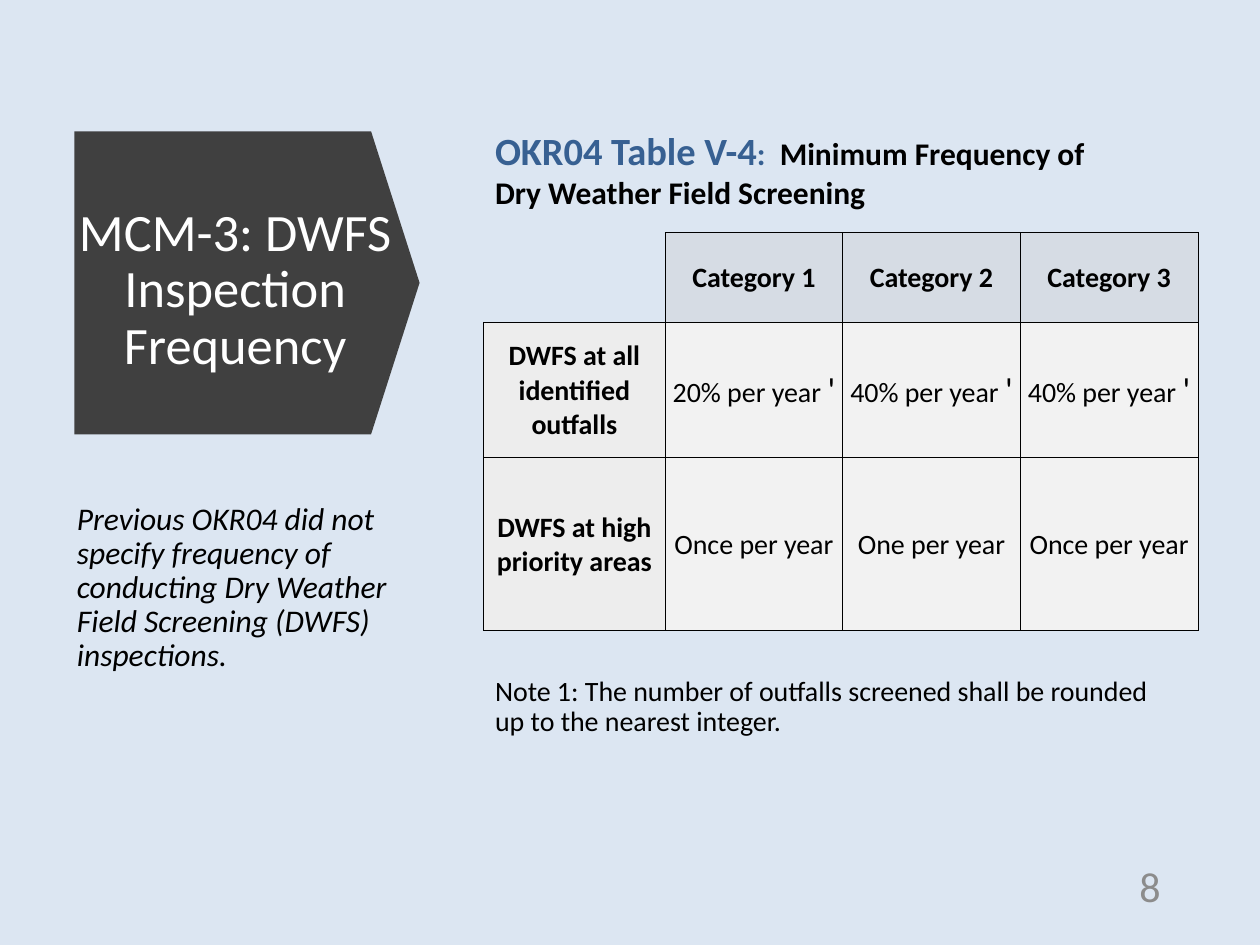
from lxml import etree
from pptx import Presentation
from pptx.dml.color import RGBColor
from pptx.enum.shapes import MSO_SHAPE
from pptx.enum.text import MSO_ANCHOR, PP_ALIGN
from pptx.oxml.ns import qn
from pptx.util import Pt

BACKGROUND = RGBColor(0xDC, 0xE6, 0xF2)
CHARCOAL = RGBColor(0x40, 0x40, 0x40)
WHITE = RGBColor(0xFF, 0xFF, 0xFF)
BLACK = RGBColor(0, 0, 0)
BLUE = RGBColor(0x37, 0x60, 0x92)
GREY = RGBColor(0x8C, 0x8C, 0x8C)
HEADER_FILL = RGBColor(0xD6, 0xDC, 0xE4)
LABEL_FILL = RGBColor(0xED, 0xED, 0xED)
VALUE_FILL = RGBColor(0xF2, 0xF2, 0xF2)
TOP, MIDDLE = MSO_ANCHOR.TOP, MSO_ANCHOR.MIDDLE
LEFT, CENTER, RIGHT = PP_ALIGN.LEFT, PP_ALIGN.CENTER, PP_ALIGN.RIGHT
DOWN_ARROW = MSO_SHAPE.DOWN_ARROW
FONT = "Calibri"

COLUMN_WIDTHS = (103.7, 101.5, 101.5, 101.5)
ROW_HEIGHTS = (51.2, 77.4, 98.6)
TABLE_ROWS = (
    ("", "Category 1", "Category 2", "Category 3"),
    ("DWFS at all\nidentified outfalls", "20% per year '", "40% per year '", "40% per year '"),
    ("DWFS at high\npriority areas", "Once per year", "One per year", "Once per year"),
)


def add_span(para, text, size, color=BLACK, bold=False, italic=False):
    """Add one formatted run to a paragraph."""
    span = para.add_run()
    span.text = text
    font = span.font
    font.name, font.size, font.bold, font.italic = FONT, Pt(size), bold, italic
    font.color.rgb = color


def add_text(page, box, anchor=MIDDLE, align=LEFT, spacing=None, before=0, after=0):
    """Add a wrapping text box and return its first paragraph."""
    frame = page.shapes.add_textbox(*map(Pt, box)).text_frame
    frame.word_wrap = True
    frame.vertical_anchor = anchor
    para = frame.paragraphs[0]
    para.alignment = align
    para.line_spacing = spacing
    para.space_before, para.space_after = Pt(before), Pt(after)
    return para


def add_title(page, box):
    """Place the right-pointing arrow and the title on it."""
    left, top, width, height = box
    shift = (width - height) / 2
    arrow = page.shapes.add_shape(
        DOWN_ARROW, Pt(left + shift), Pt(top - shift), Pt(height), Pt(width))
    arrow.rotation = 270
    arrow.adjustments[0], arrow.adjustments[1] = 1, 0.16
    arrow.shadow.inherit = False
    arrow.fill.solid()
    arrow.fill.fore_color.rgb = CHARCOAL
    arrow.line.fill.background()
    title_box = (left - 7.5, top + 21, width + 1.5, 140.4)
    para = add_text(page, title_box, align=CENTER, spacing=0.9)
    add_span(para, "MCM-3: DWFS Inspection Frequency", 30, WHITE)


def add_remark(page, box, text, size, italic=False):
    """Place a body paragraph."""
    para = add_text(page, box, spacing=0.9, before=18)
    add_span(para, text, size, italic=italic)


def add_caption(page, box):
    """Place the caption above the table."""
    para = add_text(page, box, anchor=TOP, after=6)
    add_span(para, "OKR04 Table V-4", 22, BLUE, bold=True)
    add_span(para, ":  ", 18, BLUE, bold=True)
    add_span(para, "Minimum Frequency of Dry Weather Field Screening", 18, bold=True)


def set_borders(cell, visible):
    """Draw thin black lines on the visible sides and none on the others."""
    properties = cell._tc.get_or_add_tcPr()
    for position, side in enumerate(("lnL", "lnR", "lnT", "lnB")):
        line = etree.Element(qn("a:" + side), w=str(Pt(0.5)))
        if side in visible:
            fill = etree.SubElement(line, qn("a:solidFill"))
            etree.SubElement(fill, qn("a:srgbClr"), val=str(BLACK))
        else:
            etree.SubElement(line, qn("a:noFill"))
        properties.insert(position, line)


def fill_cell(cell, text, fill, bold):
    """Write a centred table cell, with a larger mark after the yearly shares."""
    cell.fill.solid()
    cell.fill.fore_color.rgb = fill
    cell.vertical_anchor = MIDDLE
    cell.margin_left = cell.margin_right = cell.margin_top = Pt(0.7)
    cell.margin_bottom = Pt(0)
    para = cell.text_frame.paragraphs[0]
    para.alignment = CENTER
    for index, line in enumerate(text.split("\n")):
        if index:
            para.add_line_break()
        add_span(para, line.rstrip("'"), 16, bold=bold)
    if text.endswith("'"):
        add_span(para, "'", 20)


def add_frequency_table(page, left, top):
    """Place the screening frequency table."""
    size = Pt(sum(COLUMN_WIDTHS)), Pt(sum(ROW_HEIGHTS))
    table = page.shapes.add_table(
        len(ROW_HEIGHTS), len(COLUMN_WIDTHS), Pt(left), Pt(top), *size).table
    table.first_row = table.horz_banding = False
    for column, width in zip(table.columns, COLUMN_WIDTHS):
        column.width = Pt(width)
    for row_index, texts in enumerate(TABLE_ROWS):
        table.rows[row_index].height = Pt(ROW_HEIGHTS[row_index])
        for column_index, text in enumerate(texts):
            cell = table.cell(row_index, column_index)
            if not text:
                cell.fill.background()
                set_borders(cell, ("lnR", "lnB"))
                continue
            heading = row_index == 0 or column_index == 0
            fill = HEADER_FILL if row_index == 0 else LABEL_FILL if heading else VALUE_FILL
            fill_cell(cell, text, fill, heading)
            set_borders(cell, ("lnL", "lnR", "lnT", "lnB"))


def add_page_number(page, box):
    """Place the page number."""
    add_span(add_text(page, box, align=RIGHT, after=6), "8", 24, GREY)


def main():
    """Build and save the deck."""
    deck = Presentation()
    deck.slide_width, deck.slide_height = Pt(720), Pt(540)
    page = deck.slides.add_slide(deck.slide_layouts[6])
    page.background.fill.solid()
    page.background.fill.fore_color.rgb = BACKGROUND
    add_title(page, (42.5, 75, 197.3, 173.2))
    add_remark(page, (36.9, 264.2, 197.3, 144),
               "Previous OKR04 did not specify frequency of conducting Dry Weather "
               "Field Screening (DWFS) inspections.", 18, italic=True)
    add_page_number(page, (609.8, 491.8, 60.5, 28.8))
    add_caption(page, (275.8, 69.1, 372.2, 55.4))
    add_frequency_table(page, 276.4, 133)
    add_remark(page, (275.8, 374.4, 394.6, 59.8),
               "Note 1: The number of outfalls screened shall be rounded up to the "
               "nearest integer.", 16)
    deck.save("out.pptx")


if __name__ == "__main__":
    main()
